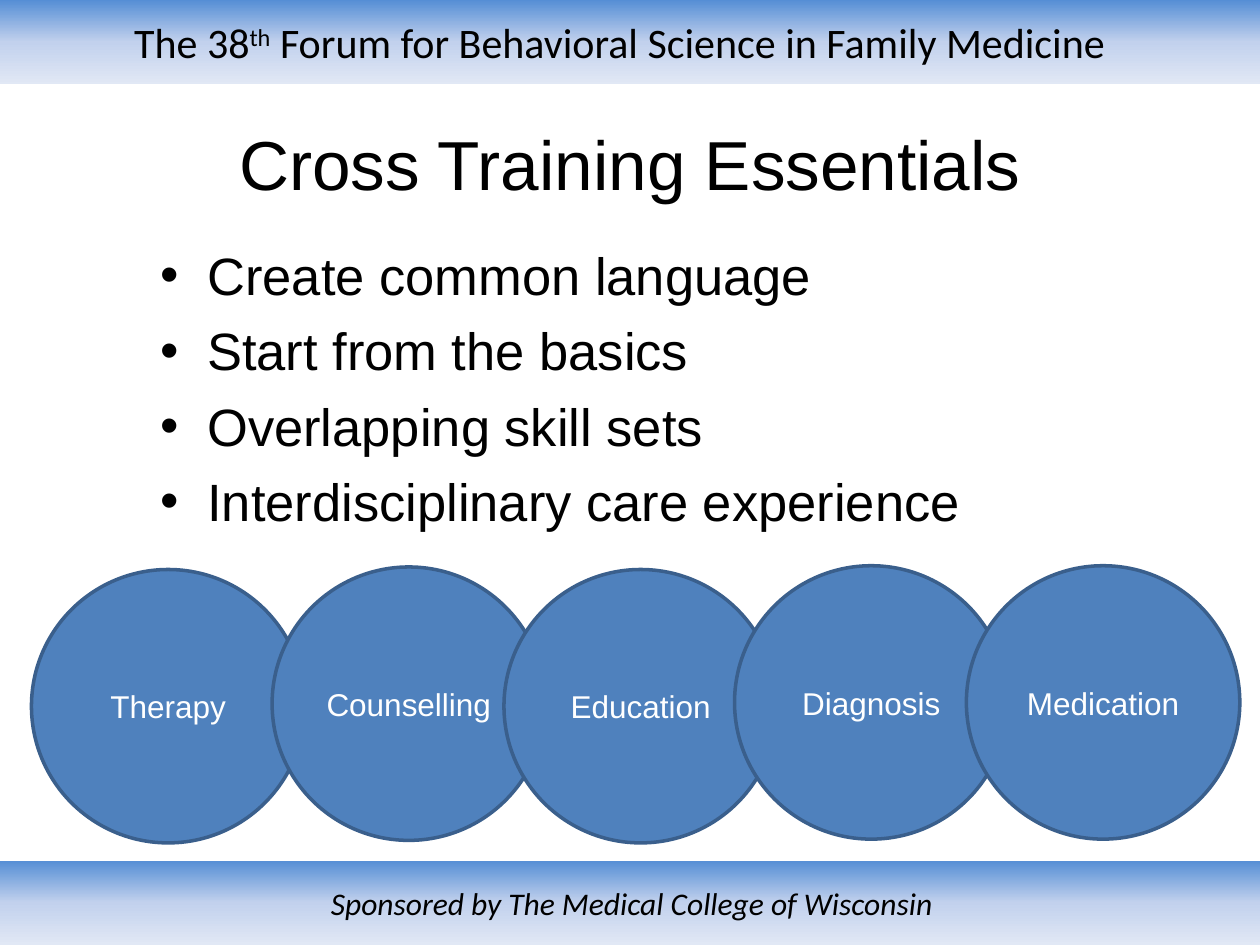
from copy import deepcopy
from dataclasses import dataclass

from pptx import Presentation
from pptx.dml.color import RGBColor
from pptx.enum.shapes import MSO_SHAPE
from pptx.enum.text import MSO_ANCHOR, MSO_AUTO_SIZE, PP_ALIGN
from pptx.oxml.ns import qn
from pptx.util import Inches, Pt

RECTANGLE, OVAL = MSO_SHAPE.RECTANGLE, MSO_SHAPE.OVAL
CENTER, LEFT = PP_ALIGN.CENTER, PP_ALIGN.LEFT
MIDDLE, TOP = MSO_ANCHOR.MIDDLE, MSO_ANCHOR.TOP
NO_AUTOFIT = MSO_AUTO_SIZE.NONE
TITLE_AND_CONTENT = 1


@dataclass(frozen=True)
class Theme:
    text: str = "000000"
    light_text: str = "FFFFFF"
    circle: str = "4F81BD"
    outline: str = "3A5F8C"
    band: tuple = ((0, "558ED5"), (0.5, "C2D1ED"), (1, "E1E8F5"))
    font: str = "Arial"
    band_font: str = "Calibri"
    title_size: float = 39.6
    list_size: float = 30
    header_size: float = 24
    label_size: float = 18


THEME = Theme()
HEADER = (("The 38", 0), ("th", 30000),
          (" Forum for Behavioral Science in Family Medicine", 0))
FOOTER = (("Sponsored by The Medical College of Wisconsin", 0),)
ESSENTIALS = ("Create common language", "Start from the basics",
              "Overlapping skill sets", "Interdisciplinary care experience")
# Each circle: label, left and top within the row
SKILLS = (("Therapy", 0, 0.03), ("Counselling", 1.91, 0.01),
          ("Education", 3.75, 0.03), ("Diagnosis", 5.58, 0),
          ("Medication", 7.42, 0))


def write(para, text, *, size, color=THEME.text, font=THEME.font,
          italic=None, baseline=0, align=CENTER):
    para.alignment = align
    span = para.add_run()
    span.text = text
    span.font.size = Pt(size)
    span.font.name = font
    span.font.italic = italic
    span.font.color.rgb = RGBColor.from_string(color)
    if baseline:
        span.font._element.set("baseline", str(baseline))


def place(shape, box):
    shape.left, shape.top, shape.width, shape.height = map(Inches, box)


def add_flat_shape(page, kind, box):
    shape = page.shapes.add_shape(kind, *map(Inches, box))
    shape.shadow.inherit = False
    shape.text_frame.word_wrap = True
    shape.text_frame.vertical_anchor = MIDDLE
    return shape


def fill_gradient(shape, colors):
    """Fill from top to bottom with any number of colour stops."""
    shape.fill.gradient()
    shape.fill.gradient_angle = 270
    stop_list = shape._element.spPr.find(".//" + qn("a:gsLst"))
    for _ in range(len(colors) - len(stop_list)):
        stop_list.append(deepcopy(stop_list[-1]))
    for stop, (position, color) in zip(shape.fill.gradient_stops, colors):
        stop.position = position
        stop.color.rgb = RGBColor.from_string(color)


def add_band(page, box, spans, size, italic=None, right_margin=0.1):
    band = add_flat_shape(page, RECTANGLE, box)
    fill_gradient(band, THEME.band)
    band.line.fill.background()
    band.text_frame.margin_right = Inches(right_margin)
    for text, baseline in spans:
        write(band.text_frame.paragraphs[0], text, size=size,
              font=THEME.band_font, italic=italic, baseline=baseline)


def set_title(page, box, text):
    title = page.shapes.title
    place(title, box)
    title.text_frame.auto_size = NO_AUTOFIT
    title.text_frame.vertical_anchor = MIDDLE
    write(title.text_frame.paragraphs[0], text, size=THEME.title_size)


def set_list(page, box, items):
    body = page.placeholders[1]
    place(body, box)
    frame = body.text_frame
    frame.auto_size = NO_AUTOFIT
    frame.vertical_anchor = TOP
    frame.margin_top = Inches(0.1)
    for index, item in enumerate(items):
        para = frame.add_paragraph() if index else frame.paragraphs[0]
        para.space_before = Pt(7 if index else 0)
        write(para, item, size=THEME.list_size, align=LEFT)


def add_skill_row(page, left, top, diameter, skills):
    for label, across, down in skills:
        box = (left + across, top + down, diameter, diameter)
        circle = add_flat_shape(page, OVAL, box)
        circle.fill.solid()
        circle.fill.fore_color.rgb = RGBColor.from_string(THEME.circle)
        circle.line.color.rgb = RGBColor.from_string(THEME.outline)
        circle.line.width = Pt(2)
        # Long labels stay on one line
        circle.text_frame.margin_left = circle.text_frame.margin_right = 0
        write(circle.text_frame.paragraphs[0], label,
              size=THEME.label_size, color=THEME.light_text)


def main():
    deck = Presentation()
    deck.slide_width, deck.slide_height = Inches(10), Inches(7.5)
    page = deck.slides.add_slide(deck.slide_layouts[TITLE_AND_CONTENT])
    add_band(page, (0, 0, 10, 0.67), HEADER, THEME.header_size,
             right_margin=0.26)
    add_band(page, (0, 6.83, 10.03, 0.67), FOOTER, THEME.label_size,
             italic=True)
    set_title(page, (0.5, 0.92, 9, 0.75), "Cross Training Essentials")
    set_list(page, (1.17, 1.83, 8.33, 3.28), ESSENTIALS)
    add_skill_row(page, 0.25, 4.49, 2.17, SKILLS)
    deck.save("out.pptx")


if __name__ == "__main__":
    main()
